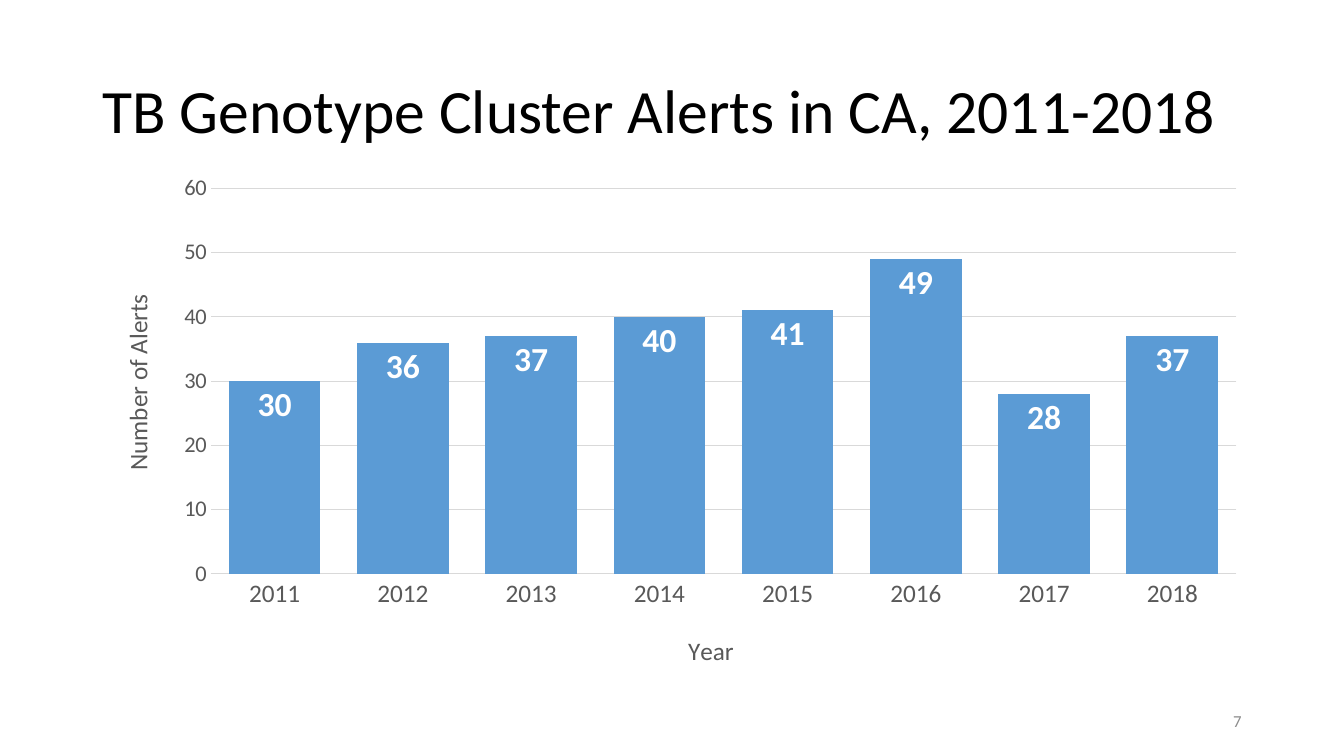
from lxml import etree
from pptx import Presentation
from pptx.chart.data import CategoryChartData
from pptx.dml.color import RGBColor
from pptx.enum.chart import XL_CHART_TYPE, XL_LABEL_POSITION, XL_TICK_MARK
from pptx.enum.text import MSO_ANCHOR, PP_ALIGN
from pptx.oxml.ns import qn
from pptx.util import Pt

COLUMNS = XL_CHART_TYPE.COLUMN_CLUSTERED
INSIDE_END = XL_LABEL_POSITION.INSIDE_END
NO_TICK = XL_TICK_MARK.NONE
MIDDLE = MSO_ANCHOR.MIDDLE
LEFT, RIGHT = PP_ALIGN.LEFT, PP_ALIGN.RIGHT

# Content
TITLE = "TB Genotype Cluster Alerts in CA, 2011-2018"
PAGE_NUMBER = "7"
ALERTS = {"2011": 30, "2012": 36, "2013": 37, "2014": 40,
          "2015": 41, "2016": 49, "2017": 28, "2018": 37}

FONT = "Calibri"
COLORS = {"title": "000000", "bar": "5B9BD5", "label": "FFFFFF",
          "axis": "595959", "grid": "D9D9D9", "number": "8C8C8C"}

# Boxes in points: left, top, width, height
TITLE_BOX = (66, 28.8, 828, 104.4)
CHART_BOX = (66, 118.8, 828, 367.2)
NUMBER_BOX = (678, 500.4, 216, 28.8)

# Places inside the chart, as fractions of its size
PLOT_PLACE = {"x": 0.102, "y": 0.043, "w": 0.885, "h": 0.75}
YEAR_PLACE = {"x": 0.51, "y": 0.9}
COUNT_PLACE = {"x": 0.02, "y": 0.24}


def color(name):
    return RGBColor.from_string(COLORS[name])


def style(font, size, name, bold=False):
    font.name, font.size, font.bold = FONT, Pt(size), bold
    font.color.rgb = color(name)


def add_text(page, box, text, size, name, align):
    shape = page.shapes.add_textbox(*map(Pt, box))
    frame = shape.text_frame
    frame.word_wrap = True
    frame.vertical_anchor = MIDDLE
    para = frame.paragraphs[0]
    para.text, para.alignment = text, align
    style(para.font, size, name)
    return para


def place(parent, index, fractions, inner=False):
    """Give a chart part a manual layout."""
    for old in parent.findall(qn("c:layout")):
        parent.remove(old)
    layout = etree.Element(qn("c:layout"))
    manual = etree.SubElement(layout, qn("c:manualLayout"))
    settings = [("layoutTarget", "inner")] if inner else []
    settings += [("xMode", "edge"), ("yMode", "edge")]
    settings += fractions.items()
    for tag, value in settings:
        etree.SubElement(manual, qn("c:" + tag)).set("val", str(value))
    parent.insert(index, layout)


def style_axis(axis, title, size, fractions):
    axis.major_tick_mark = axis.minor_tick_mark = NO_TICK
    style(axis.tick_labels.font, size, "axis")
    frame = axis.axis_title.text_frame
    frame.text = title
    style(frame.paragraphs[0].font, 18, "axis")
    place(axis.axis_title._element, 1, fractions)
    return frame


def draw_line(line):
    line.color.rgb = color("grid")
    line.width = Pt(0.75)


def add_alert_chart(page):
    data = CategoryChartData()
    data.categories = list(ALERTS)
    data.add_series("Series 1", list(ALERTS.values()))
    chart = page.shapes.add_chart(COLUMNS, *map(Pt, CHART_BOX), data).chart
    chart.has_legend = chart.has_title = False
    chart.font.name, chart.font.size = FONT, Pt(10)

    # Columns and their values
    plot = chart.plots[0]
    plot.gap_width, plot.overlap = 40, -27
    plot.vary_by_categories = False
    fill = plot.series[0].format.fill
    fill.solid()
    fill.fore_color.rgb = color("bar")
    labels = plot.series[0].data_labels
    labels.show_value, labels.position = True, INSIDE_END
    style(labels.font, 24, "label", bold=True)

    # Axes
    years, counts = chart.category_axis, chart.value_axis
    style_axis(years, "Year", 18, YEAR_PLACE)
    draw_line(years.format.line)
    frame = style_axis(counts, "Number of Alerts", 16, COUNT_PLACE)
    frame._txBody.find(qn("a:bodyPr")).set("rot", "-5400000")
    counts.minimum_scale, counts.maximum_scale, counts.major_unit = 0, 60, 10
    counts.format.line.fill.background()
    draw_line(counts.major_gridlines.format.line)

    place(chart._chartSpace.find(".//" + qn("c:plotArea")), 0, PLOT_PLACE, inner=True)


def main():
    deck = Presentation()
    deck.slide_width, deck.slide_height = Pt(960), Pt(540)
    page = deck.slides.add_slide(deck.slide_layouts[6])
    heading = add_text(page, TITLE_BOX, TITLE, 44, "title", LEFT)
    heading.line_spacing = 0.9
    add_alert_chart(page)
    add_text(page, NUMBER_BOX, PAGE_NUMBER, 12, "number", RIGHT)
    deck.save("out.pptx")


if __name__ == "__main__":
    main()
